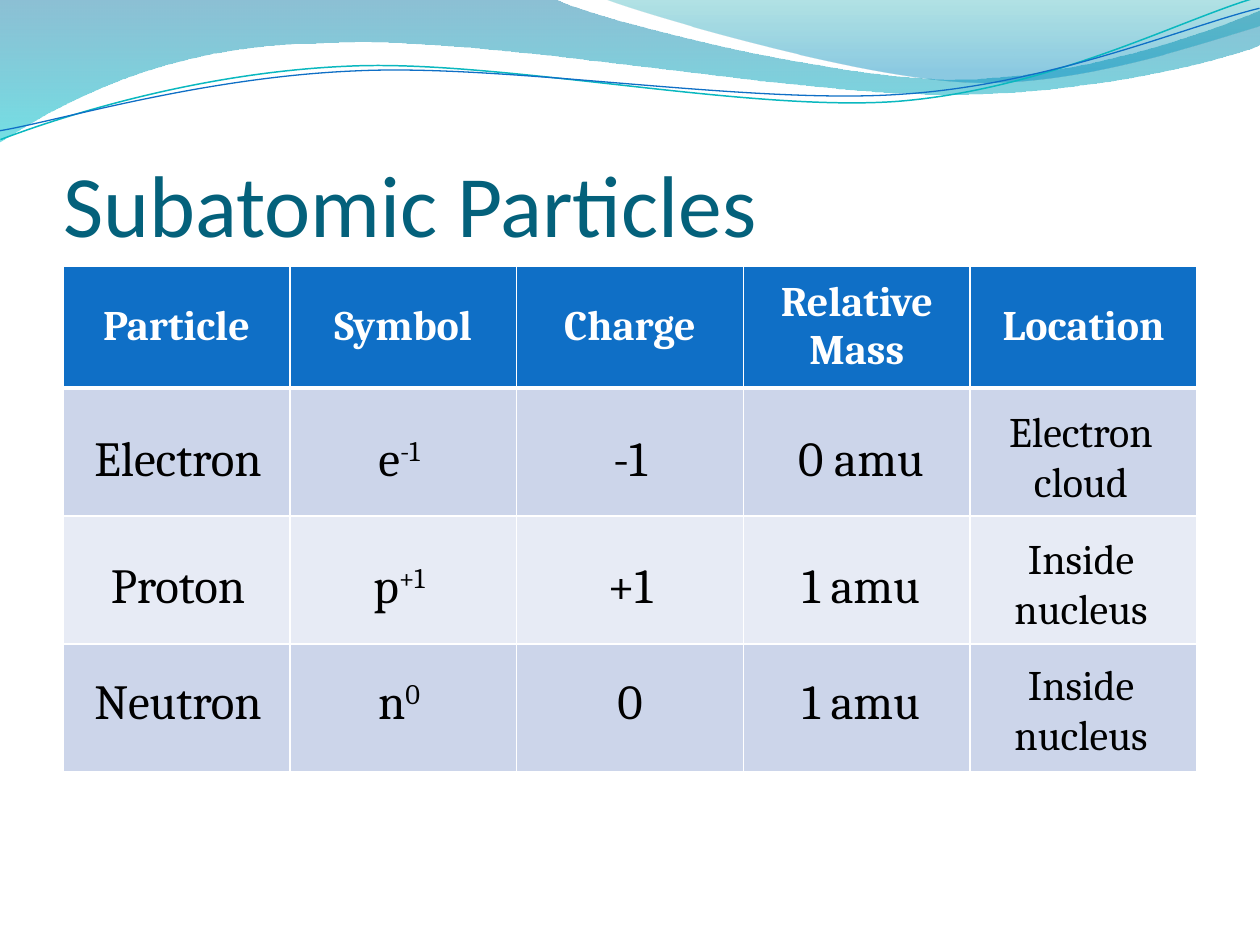
from lxml.etree import SubElement
from pptx import Presentation
from pptx.dml.color import RGBColor
from pptx.enum.text import MSO_ANCHOR, MSO_AUTO_SIZE, PP_ALIGN
from pptx.oxml.ns import qn
from pptx.util import Emu, Pt

SCALE = 914400 / 126
CENTER, LEFT = PP_ALIGN.CENTER, PP_ALIGN.LEFT
MIDDLE, BOTTOM = MSO_ANCHOR.MIDDLE, MSO_ANCHOR.BOTTOM
NO_FIT, GROW = MSO_AUTO_SIZE.NONE, MSO_AUTO_SIZE.SHAPE_TO_FIT_TEXT
TITLE_ONLY = 5
CURVE_ROTATION = 357.3

WHITE = RGBColor(0xFF, 0xFF, 0xFF)
BLACK = RGBColor(0, 0, 0)
TITLE_TEAL = RGBColor(0x04, 0x61, 0x7B)
HEADER_BLUE = RGBColor(0x0F, 0x6F, 0xC6)
LINE_TEAL = RGBColor(0x0A, 0xB8, 0xBF)
DARK_BAND = RGBColor(0xCC, 0xD5, 0xEA)
LIGHT_BAND = RGBColor(0xE7, 0xEB, 0xF5)
DEEP_BLUE = RGBColor(0x00, 0x74, 0xA1)
AQUA = RGBColor(0x00, 0xC6, 0xCF)
SEA_GREEN = RGBColor(0x00, 0xA1, 0xA9)
SKY_BLUE = RGBColor(0x00, 0x8B, 0xBF)

WIDE_WAVE = [
    [(0, -1)], [(554, -1)],
    [(600, 21), (837, 79), (955, 79)],
    [(1075, 79), (1207, 33), (1260, 11)],
    [(1261, 45)],
    [(1239, 55), (1096, 96), (940, 94)],
    [(784, 94), (481, 35), (324, 43)],
    [(163, 44), (58, 105), (-1, 142)],
    [(0, -1)],
]
RIGHT_WAVE = [
    [(604, -1)],
    [(641, 14), (859, 78), (969, 82)],
    [(1079, 87), (1211, 40), (1260, 26)],
    [(1260, 0)], [(604, -1)],
]
TEAL_CURVE = [
    [(-2, 110)],
    [(59, 90), (199, 52), (350, 53)],
    [(499, 53), (745, 118), (896, 114)],
    [(1049, 109), (1184, 45), (1260, 27)],
]
BLUE_CURVE = [
    [(-2, 101)],
    [(57, 94), (203, 57), (357, 58)],
    [(509, 58), (750, 111), (902, 107)],
    [(1052, 104), (1189, 52), (1262, 38)],
]

HEADERS = ["Particle", "Symbol", "Charge", "Relative Mass", "Location"]
PARTICLES = [
    ("Electron", ("e", "-1"), "-1", "0 amu", "Electron cloud"),
    ("Proton", ("p", "+1"), "+1", "1 amu", "Inside nucleus"),
    ("Neutron", ("n", "0"), "0", "1 amu", "Inside nucleus"),
]
COLUMN_LEFTS = [73, 294, 525, 756, 976]
ROW_TOPS = [(421, 399), (548, 526), (664, 652)]


def px(value):
    return Emu(round(value * SCALE))


def add_outline(shapes, segments, close):
    start, *rest = [(px(x), px(y)) for segment in segments for x, y in segment]
    builder = shapes.build_freeform(*start)
    builder.add_line_segments(rest, close=close)
    shape = builder.convert_to_shape()
    shape.shadow.inherit = False
    bend_segments(shape, segments)
    return shape


def bend_segments(shape, segments):
    steps = iter(list(shape._element.iter(qn("a:lnTo"))))
    for segment in segments[1:]:
        first, *others = [next(steps) for _ in segment]
        if others:
            first.tag = qn("a:cubicBezTo")
            for step in others:
                first.append(step[0])
                step.getparent().remove(step)


def add_wave(shapes, segments, stops):
    shape = add_outline(shapes, segments, True)
    shape.line.fill.background()
    shape.fill.gradient()
    shape.fill.gradient_angle = 270
    for stop, (position, color, _) in zip(shape.fill.gradient_stops, stops):
        stop.position = position
        stop.color.rgb = color
    for element, (_, _, opacity) in zip(shape._element.iter(qn("a:srgbClr")), stops):
        SubElement(element, qn("a:alpha")).set("val", str(opacity * 1000))


def add_curve(shapes, segments, color, width):
    shape = add_outline(shapes, segments, False)
    shape.rotation = CURVE_ROTATION
    shape.fill.background()
    shape.line.color.rgb = color
    shape.line.width = Pt(width)


def format_paragraph(paragraph, font_name, size, color, alignment, bold=False):
    paragraph.alignment = alignment
    for run in paragraph.runs:
        run.font.name = font_name
        run.font.size = Pt(size)
        run.font.color.rgb = color
        run.font.bold = bold


def set_title(slide, text):
    title = slide.shapes.title
    title.left, title.top, title.width, title.height = map(px, (63, 97, 1134, 158))
    frame = title.text_frame
    frame.text = text
    frame.auto_size = NO_FIT
    frame.vertical_anchor = BOTTOM
    frame.margin_left = frame.margin_right = frame.margin_bottom = 0
    format_paragraph(frame.paragraphs[0], "Calibri", 50, TITLE_TEAL, LEFT)
    slide.shapes._spTree.append(title._element)


def set_borders(cell, top, bottom):
    properties = cell._tc.get_or_add_tcPr()
    for side, width in (("L", 1), ("R", 1), ("T", top), ("B", bottom)):
        line = SubElement(properties, qn(f"a:ln{side}"), w=str(Pt(width)))
        fill = SubElement(line, qn("a:solidFill"))
        SubElement(fill, qn("a:srgbClr"), val=str(WHITE))


def add_particle_table(slide):
    row_count, column_count = len(PARTICLES) + 1, len(HEADERS)
    table = slide.shapes.add_table(
        row_count, column_count, px(63), px(266), px(1134), px(506)).table
    table.horz_banding = False
    for row_index, row in enumerate(table.rows):
        row.height = px(128 if row_index else 122)
        color = (DARK_BAND if row_index % 2 else LIGHT_BAND) if row_index else HEADER_BLUE
        for cell in row.cells:
            set_borders(cell, 3 if row_index == 1 else 1, 1 if row_index else 3)
            cell.fill.solid()
            cell.fill.fore_color.rgb = color
    for cell, header in zip(table.rows[0].cells, HEADERS):
        cell.text_frame.text = header
        cell.vertical_anchor = MIDDLE
        format_paragraph(cell.text_frame.paragraphs[0], "Cambria", 24, WHITE, CENTER, True)


def add_entry(slide, left, top, height, entry, size):
    base, *superscripts = entry if isinstance(entry, tuple) else (entry,)
    frame = slide.shapes.add_textbox(px(left), px(top), px(210), px(height)).text_frame
    frame.word_wrap = True
    frame.auto_size = GROW
    frame.text = base
    paragraph = frame.paragraphs[0]
    for superscript in superscripts:
        run = paragraph.add_run()
        run.text = superscript
        run._r.get_or_add_rPr().set("baseline", "30000")
    format_paragraph(paragraph, "Cambria", size, BLACK, CENTER)


def main():
    presentation = Presentation()
    presentation.slide_width, presentation.slide_height = px(1260), px(945)
    slide = presentation.slides.add_slide(presentation.slide_layouts[TITLE_ONLY])
    add_wave(slide.shapes, WIDE_WAVE, [(0, DEEP_BLUE, 45), (1, AQUA, 55)])
    add_wave(slide.shapes, RIGHT_WAVE, [(0, SEA_GREEN, 30), (0.8, SKY_BLUE, 45)])
    curves = slide.shapes.add_group_shape().shapes
    add_curve(curves, TEAL_CURVE, LINE_TEAL, 0.85)
    add_curve(curves, BLUE_CURVE, HEADER_BLUE, 0.75)
    set_title(slide, "Subatomic Particles")
    add_particle_table(slide)
    for (top, location_top), (*values, location) in zip(ROW_TOPS, PARTICLES):
        for left, value in zip(COLUMN_LEFTS, values):
            add_entry(slide, left, top, 72, value, 28)
        add_entry(slide, COLUMN_LEFTS[-1], location_top, 115, location, 24)
    presentation.save("out.pptx")


if __name__ == "__main__":
    main()
